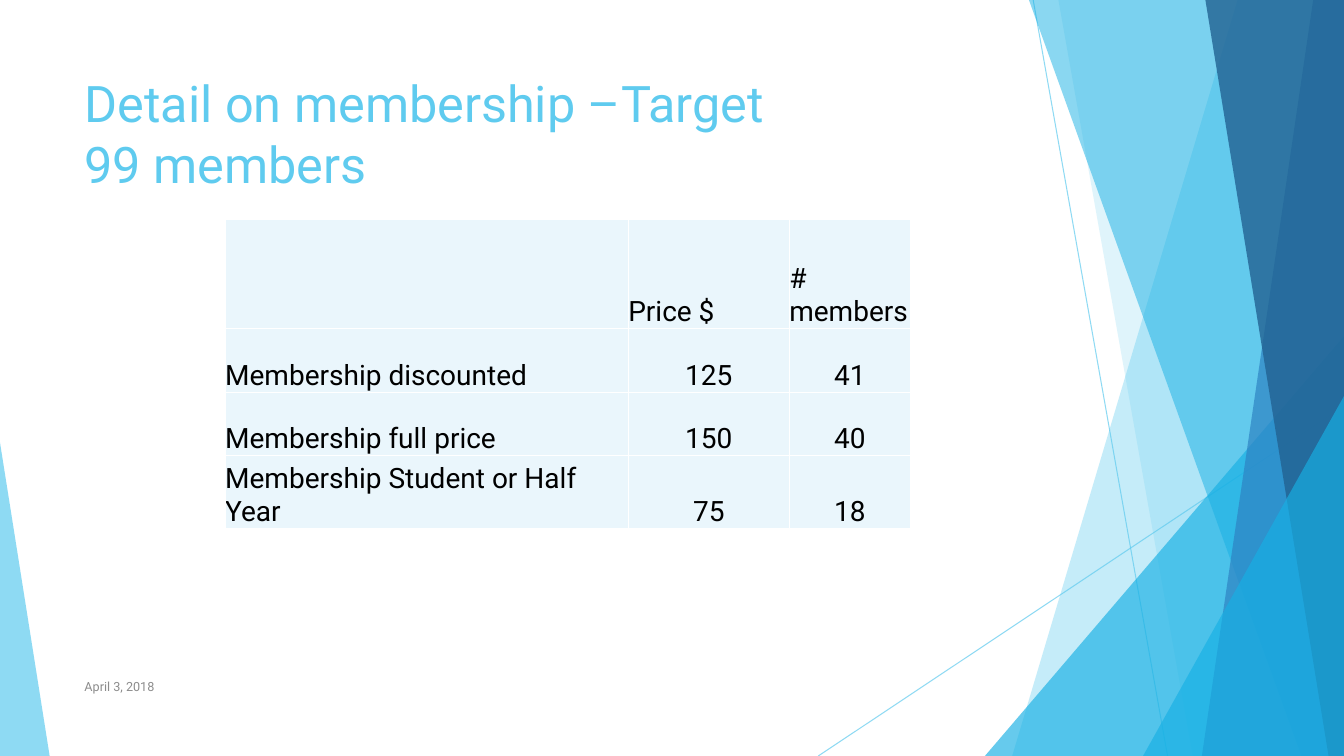
import pptx
import pptx.util
import pptx.dml.color
import pptx.enum.shapes
import pptx.enum.text
import pptx.oxml
import pptx.oxml.ns

Pt = pptx.util.Pt
Anchor = pptx.enum.text.MSO_ANCHOR
SKY, CYAN, BLUE, NAVY = "5FCBEF", "17B0E4", "2E83C3", "226292"
WIDE, HIGH = 960, 540


def paint(text):
    return pptx.dml.color.RGBColor.from_string(text)


def fade(fill, hue, part):
    fill.solid()
    fill.fore_color.rgb = paint(hue)
    tint = fill._xPr.find(".//" + pptx.oxml.ns.qn("a:srgbClr"))
    alpha = pptx.oxml.parse_xml(
        f'<a:alpha {pptx.oxml.ns.nsdecls("a")} val="{part * 1000}"/>')
    tint.append(alpha)


class Page:
    face = "Roboto"

    def __init__(self, slide):
        self.shapes = slide.shapes

    def style(self, para, size, hue):
        para.font.name = self.face
        para.font.size = Pt(size)
        para.font.color.rgb = paint(hue)

    def line(self, x1, y1, x2, y2):
        line = self.shapes.add_connector(
            pptx.enum.shapes.MSO_CONNECTOR.STRAIGHT, Pt(x1), Pt(y1), Pt(x2), Pt(y2))
        line.line.width = Pt(0.75)
        fade(line.line.fill, SKY, 70)
        line._element.spPr.append(pptx.oxml.parse_xml(
            f'<a:effectLst {pptx.oxml.ns.nsdecls("a")}/>'))

    def plain(self, shape, hue, part):
        shape.shadow.inherit = False
        shape.line.fill.background()
        fade(shape.fill, hue, part)

    def band(self, top, foot, hue, part):
        pen = self.shapes.build_freeform(Pt(top), 0)
        pen.add_line_segments(
            [(Pt(x), Pt(y)) for x, y in ((WIDE, 0), (WIDE, HIGH), (foot, HIGH))])
        self.plain(pen.convert_to_shape(), hue, part)

    def wedge(self, x, y, width, peak, hue, part):
        shape = self.shapes.add_shape(
            pptx.enum.shapes.MSO_SHAPE.ISOSCELES_TRIANGLE,
            Pt(x), Pt(y), Pt(width), Pt(HIGH - y))
        shape.adjustments[0] = peak
        self.plain(shape, hue, part)

    def text(self, x, y, width, height, words, size, hue, anchor):
        frame = self.shapes.add_textbox(Pt(x), Pt(y), Pt(width), Pt(height)).text_frame
        frame.word_wrap = True
        frame.vertical_anchor = anchor
        para = frame.paragraphs[0]
        para.text = words
        self.style(para, size, hue)

    def cell(self, cell, words, align):
        cell.margin_left = cell.margin_right = cell.margin_top = cell.margin_bottom = 0
        cell.vertical_anchor = Anchor.BOTTOM
        para = cell.text_frame.paragraphs[0]
        para.text = words
        para.alignment = align
        self.style(para, 20, "000000")
        props = cell._tc.get_or_add_tcPr()
        for side in ("lnL", "lnR", "lnT", "lnB"):
            props.append(pptx.oxml.parse_xml(
                f'<a:{side} {pptx.oxml.ns.nsdecls("a")} w="12700"><a:solidFill>'
                f'<a:srgbClr val="FFFFFF"/></a:solidFill></a:{side}>'))
        cell.fill.solid()
        cell.fill.fore_color.rgb = paint("EAF6FC")

    def table(self, x, y, widths, heights, rows):
        grid = self.shapes.add_table(
            len(rows), len(widths), Pt(x), Pt(y), Pt(sum(widths)), Pt(sum(heights))).table
        for col, width in zip(grid.columns, widths):
            col.width = Pt(width)
        for row, height in zip(grid.rows, heights):
            row.height = Pt(height)
        for r, row in enumerate(rows):
            for c, words in enumerate(row):
                align = pptx.enum.text.PP_ALIGN.CENTER if r and c else None
                self.cell(grid.cell(r, c), words, align)


def main():
    deck = pptx.Presentation()
    deck.slide_width, deck.slide_height = Pt(WIDE), Pt(HIGH)
    page = Page(deck.slides.add_slide(deck.slide_layouts[6]))

    page.line(738, 0, 834, HIGH)
    page.line(WIDE, 290, 584.5, HIGH)
    page.band(884, 723, SKY, 36)
    page.band(756, 852, SKY, 20)
    page.wedge(703.5, 240, 256.5, 1, CYAN, 66)
    page.band(735, 929.5, CYAN, 50)
    page.band(938, 858.5, BLUE, 70)
    page.band(861, 949, NAVY, 80)
    page.wedge(816.5, 283, 143.5, 1, CYAN, 66)
    page.wedge(0, 316, 35.5, 0, SKY, 70)

    page.text(53.3, 48, 677, 104, "Detail on membership –Target\v99 members",
              36, SKY, Anchor.TOP)
    page.text(53.3, 476, 496, 29, "April 3, 2018", 9, "8C8C8C", Anchor.MIDDLE)
    page.table(160.8, 156.5, (288, 115, 86.4), (78.3, 45.3, 45.3, 52.3), (
        ("", "Price $", "# members"),
        ("Membership discounted", "125", "41"),
        ("Membership full price", "150", "40"),
        ("Membership Student or Half Year", "75", "18"),
    ))
    deck.save("out.pptx")


if __name__ == "__main__":
    main()
